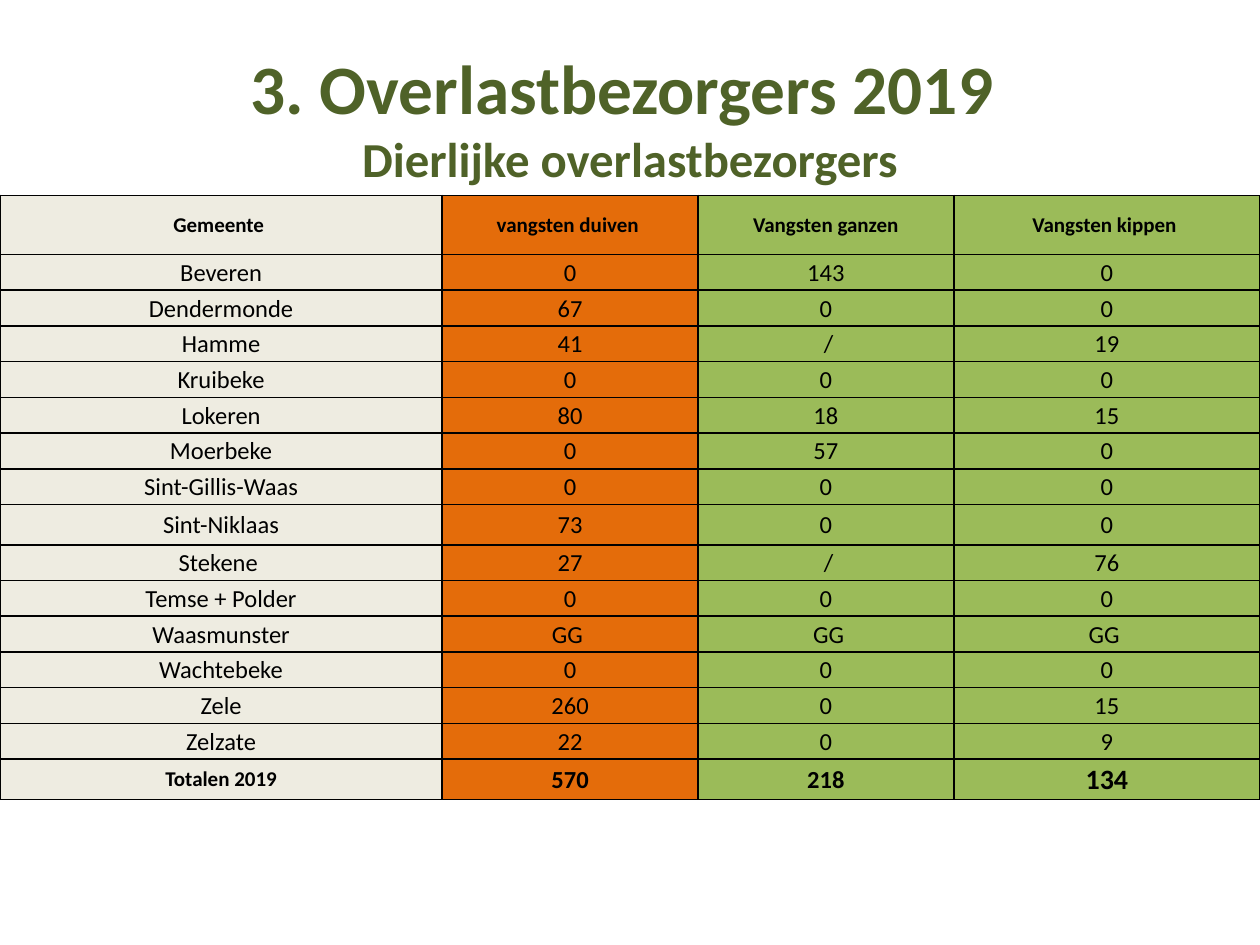
from dataclasses import dataclass

from lxml.etree import SubElement
from pptx import Presentation
from pptx.dml.color import RGBColor
from pptx.enum.text import MSO_ANCHOR, PP_ALIGN
from pptx.oxml.ns import qn
from pptx.util import Inches, Pt


@dataclass(frozen=True)
class Theme:
    """Colours, font and type sizes of the slide."""
    font: str = "Calibri"
    heading: str = "4F6228"
    ink: str = "000000"
    columns: tuple = ("EEECE1", "E46C0A", "9BBB59", "9BBB59")
    title_size: float = 39.6
    subtitle_size: float = 27.9
    label_size: float = 12
    body_size: float = 14
    grand_total_size: float = 16


class SlideBuilder:
    """Adds styled elements to the current slide."""

    def __init__(self, slide, theme):
        self.slide = slide
        self.theme = theme

    def style(self, font, size, color, bold):
        """Apply the theme font with a size, colour and weight."""
        font.name = self.theme.font
        font.size = Pt(size)
        font.bold = bold
        font.color.rgb = RGBColor.from_string(color)

    def title(self, lines, left, top, width, height):
        """Add a centred heading whose lines share one paragraph."""
        shape = self.slide.shapes.add_textbox(
            Inches(left), Inches(top), Inches(width), Inches(height))
        text_frame = shape.text_frame
        text_frame.word_wrap = True
        text_frame.vertical_anchor = MSO_ANCHOR.MIDDLE
        paragraph = text_frame.paragraphs[0]
        paragraph.text = "\v".join(lines)
        paragraph.alignment = PP_ALIGN.CENTER
        sizes = (self.theme.title_size, self.theme.subtitle_size)
        for run, size in zip(paragraph.runs, sizes):
            self.style(run.font, size, self.theme.heading, True)

    def table(self, rows, left, top, column_widths, row_heights):
        """Add the catch table with a header row and a totals row."""
        table = self.slide.shapes.add_table(
            len(rows), len(column_widths), Inches(left), Inches(top),
            Inches(sum(column_widths)), Inches(sum(row_heights))).table
        table.first_row = False
        table.horz_banding = False
        for column, width in zip(table.columns, column_widths):
            column.width = Inches(width)
        last_row, last_column = len(rows) - 1, len(column_widths) - 1
        for row_index, values in enumerate(rows):
            table.rows[row_index].height = Inches(row_heights[row_index])
            for column_index, value in enumerate(values):
                total = row_index == last_row
                label = row_index == 0 or (total and column_index == 0)
                size = self.theme.body_size
                if label:
                    size = self.theme.label_size
                elif total and column_index == last_column:
                    size = self.theme.grand_total_size
                self.cell(table.cell(row_index, column_index), value,
                          self.theme.columns[column_index], size, label, total)

    def cell(self, cell, text, fill, size, label, total):
        """Fill one table cell and draw its borders."""
        cell.margin_left = cell.margin_right = Inches(0.03 if label else 0.01)
        cell.margin_top = Inches(0 if label else 0.01)
        cell.margin_bottom = 0
        cell.vertical_anchor = MSO_ANCHOR.MIDDLE
        paragraph = cell.text_frame.paragraphs[0]
        paragraph.text = text
        paragraph.alignment = PP_ALIGN.CENTER
        self.style(paragraph.runs[0].font, size, self.theme.ink, label or total)
        self.borders(cell)
        cell.fill.solid()
        cell.fill.fore_color.rgb = RGBColor.from_string(fill)

    def borders(self, cell):
        """Draw a one-point line on all four sides of a cell."""
        properties = cell._tc.get_or_add_tcPr()
        for side in ("a:lnL", "a:lnR", "a:lnT", "a:lnB"):
            line = SubElement(properties, qn(side), w=str(Pt(1)))
            fill = SubElement(line, qn("a:solidFill"))
            SubElement(fill, qn("a:srgbClr"), val=self.theme.ink)


CATCHES = [
    ("Gemeente ", "vangsten duiven ", "Vangsten ganzen", "Vangsten kippen "),
    ("Beveren", "0", "143", "0"),
    ("Dendermonde", "67", "0", "0"),
    ("Hamme", "41", " /", "19"),
    ("Kruibeke", "0", "0", "0"),
    ("Lokeren", "80", "18", "15"),
    ("Moerbeke", "0", "57", "0"),
    ("Sint-Gillis-Waas", "0", "0", "0"),
    ("Sint-Niklaas", "73", "0", "0"),
    ("Stekene ", "27", " /", "76"),
    ("Temse + Polder", "0", "0", "0"),
    ("Waasmunster", "GG ", " GG", "GG "),
    ("Wachtebeke", "0", "0", "0"),
    ("Zele", "260", "0", "15"),
    ("Zelzate", "22", "0", "9"),
    ("Totalen 2019", "570", "218", "134"),
]
TABLE_HEIGHT = 4.8
SPECIAL_HEIGHTS = {"Gemeente ": 0.47, "Sint-Niklaas": 0.32, "Totalen 2019": 0.32}


def main():
    """Build the slide and save the presentation."""
    presentation = Presentation()
    presentation.slide_width = Inches(10)
    presentation.slide_height = Inches(7.5)
    slide = presentation.slides.add_slide(presentation.slide_layouts[6])
    builder = SlideBuilder(slide, Theme())
    builder.title(("3. Overlastbezorgers 2019 ", "Dierlijke overlastbezorgers"),
                  0.5, 0.3, 9, 1.25)
    regular_height = ((TABLE_HEIGHT - sum(SPECIAL_HEIGHTS.values()))
                      / (len(CATCHES) - len(SPECIAL_HEIGHTS)))
    row_heights = [SPECIAL_HEIGHTS.get(row[0], regular_height) for row in CATCHES]
    builder.table(CATCHES, 0, 1.55, (3.51, 2.03, 2.03, 2.43), row_heights)
    presentation.save("out.pptx")


if __name__ == "__main__":
    main()
